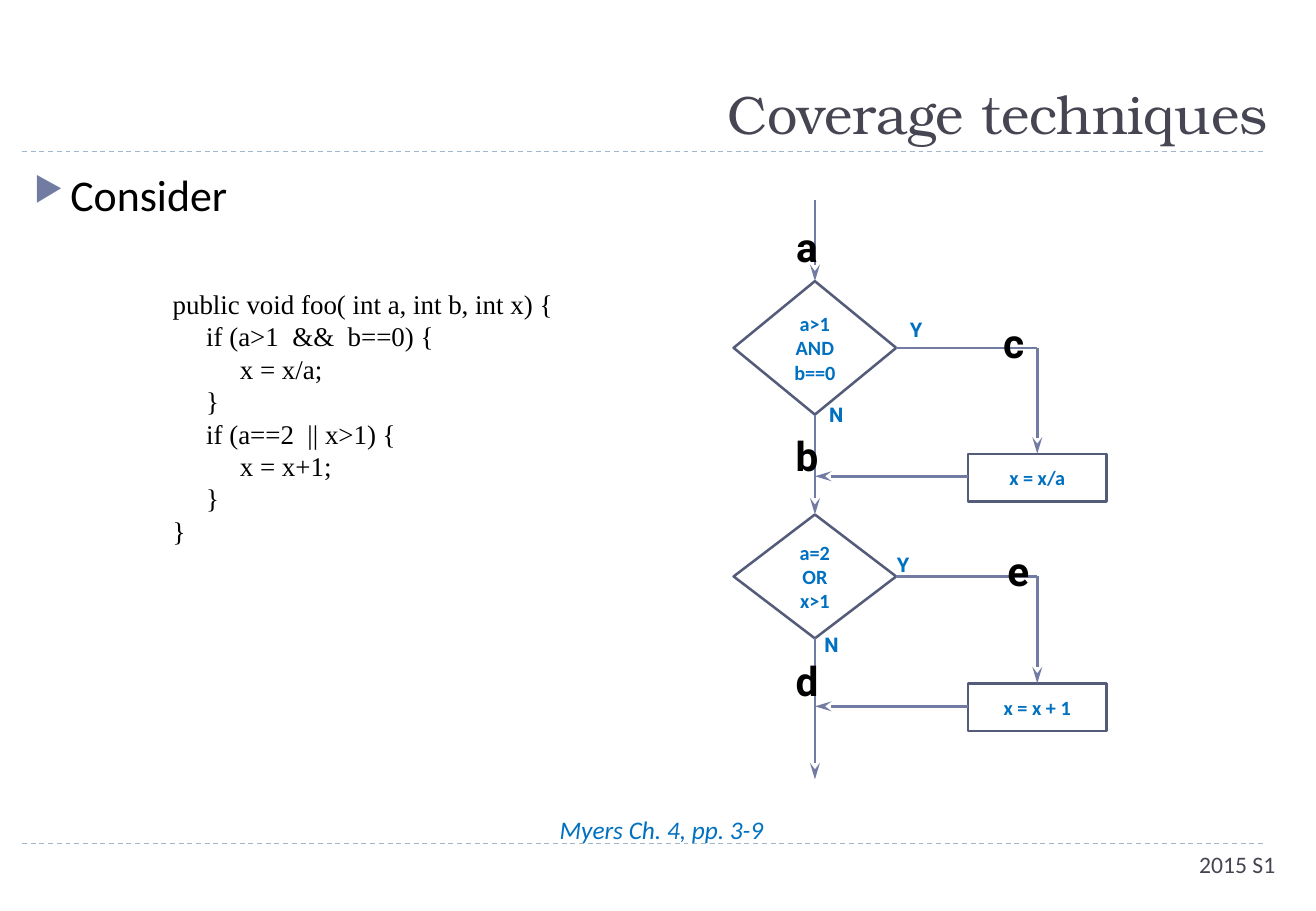
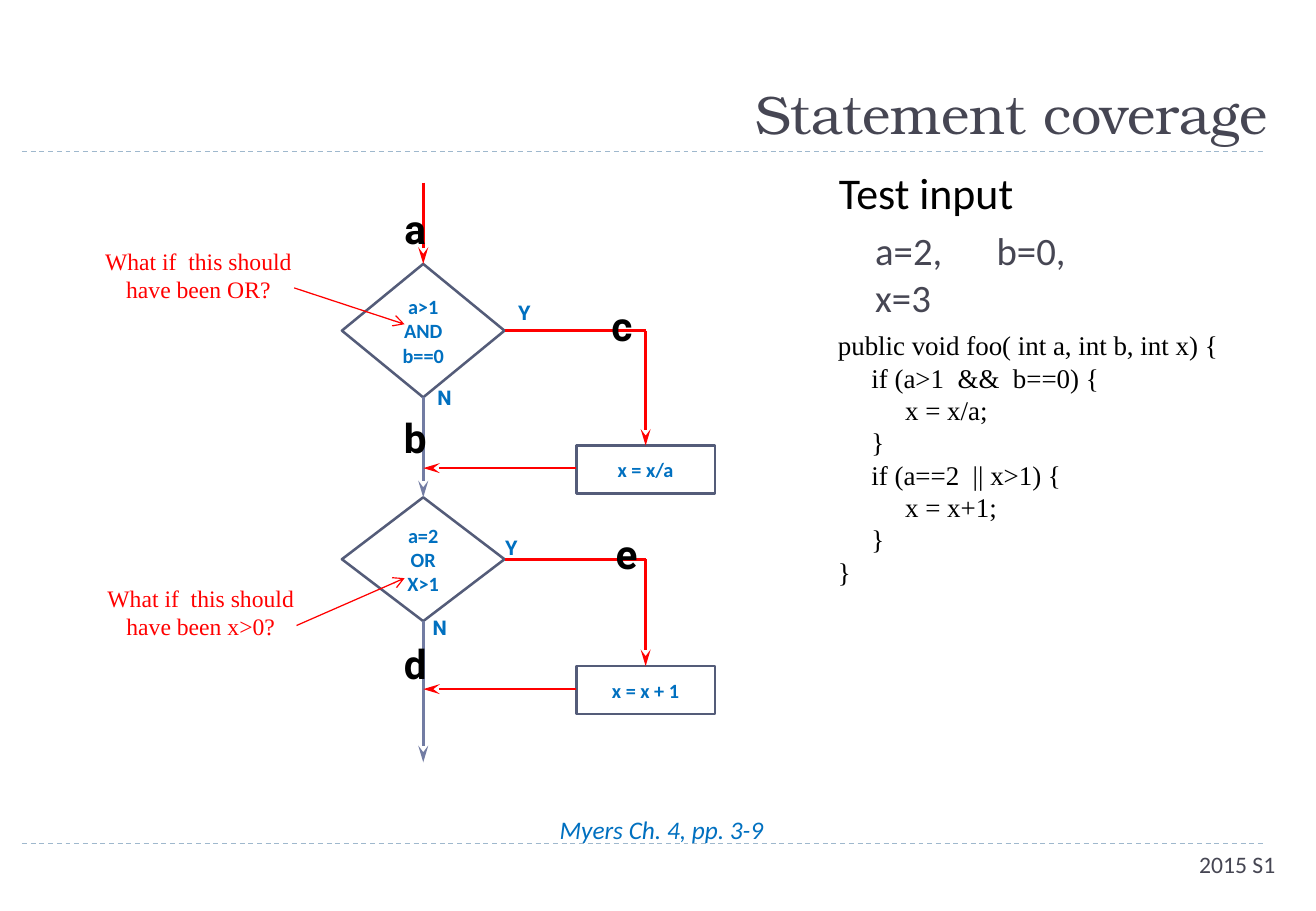
"""Build two slides on coverage techniques with a shared flowchart and code sample."""
import lxml.etree
import pptx
import pptx.dml.color
import pptx.enum.dml
import pptx.enum.shapes
import pptx.enum.text
import pptx.oxml.ns
import pptx.util

Cm = pptx.util.Cm
Pt = pptx.util.Pt
qn = pptx.oxml.ns.qn
SHAPE = pptx.enum.shapes.MSO_SHAPE
ANCHOR = pptx.enum.text.MSO_ANCHOR
ALIGN = pptx.enum.text.PP_ALIGN

COLORS = {
    "rule": "9FB8CD",
    "heading": "464653",
    "body": "000000",
    "accent": "0070C0",
    "outline": "545C79",
    "flow": "727CA3",
    "taken": "FF0000",
    "paper": "FFFFFF",
}
RGB = {role: pptx.dml.color.RGBColor.from_string(value) for role, value in COLORS.items()}


def write(holder, text, size=12, font="Calibri", color="body", align=ALIGN.LEFT, anchor=ANCHOR.TOP,
          bold=False, italic=False, before=0, left=0, hanging=0, bullet=None):
    frame = holder.text_frame
    frame.word_wrap = True
    frame.vertical_anchor = anchor
    for line in text.split("\n"):
        paragraph = frame.add_paragraph() if frame.text else frame.paragraphs[0]
        paragraph.alignment = align
        paragraph.space_before = Pt(before)
        properties = paragraph._p.get_or_add_pPr()
        properties.set("marL", str(Cm(left)))
        properties.set("indent", str(-Cm(hanging)))
        if bullet:
            tint = lxml.etree.SubElement(properties, qn("a:buClr"))
            lxml.etree.SubElement(tint, qn("a:srgbClr"), val=COLORS["flow"])
            lxml.etree.SubElement(properties, qn("a:buSzPct"), val="76000")
            lxml.etree.SubElement(properties, qn("a:buFont"), typeface="OpenSymbol")
            lxml.etree.SubElement(properties, qn("a:buChar"), char=bullet)
        run = paragraph.add_run()
        run.text = line
        run.font.name = font
        run.font.size = Pt(size)
        run.font.bold = bold
        run.font.italic = italic
        run.font.color.rgb = RGB[color]


def draw_line(slide, ends, color, width=1.5, head=None, length="lg", dash=None):
    line = slide.shapes.add_connector(pptx.enum.shapes.MSO_CONNECTOR.STRAIGHT, *map(Cm, ends))
    line.line.color.rgb = RGB[color]
    line.line.width = Pt(width)
    if dash:
        line.line.dash_style = dash
    outline = line.line._get_or_add_ln()
    if head:
        lxml.etree.SubElement(outline, qn("a:tailEnd"), type=head, w="med", len=length)
    lxml.etree.SubElement(line._element.spPr, qn("a:effectLst"))


CODE = """public void foo( int a, int b, int x) {
     if (a>1  &&  b==0) {
          x = x/a;
     }
     if (a==2  || x>1) {
          x = x+1;
     }
}"""

LABELS = [
    ("a", -0.71, 0.33), ("b", -0.71, 4.7), ("c", 3.61, 2.34), ("d", -0.71, 9.42), ("e", 3.71, 7.11),
    ("Y", 1.57, 2.34), ("Y", 1.3, 7.24), ("N", -0.1, 4.11), ("N", -0.2, 8.92),
]

TOPICS = [
    {"title": "Coverage techniques", "axis": 17.04, "top": 4.18, "division": 5.31,
     "second_test": "a=2\nOR\nx>1", "route": "flow", "code_at": (3.36, 5.89)},
    {"title": "Statement coverage", "axis": 8.85, "top": 3.82, "division": 5.5,
     "second_test": "a=2\nOR\nX>1", "route": "taken", "code_at": (17.27, 6.75)},
]

HALF_DIAMOND = 1.7
BOX_LEFT, BOX_WIDTH, BOX_HEIGHT = 3.2, 2.9, 1
BRANCH = BOX_LEFT + BOX_WIDTH / 2
FIRST_TOP, FIRST_HEIGHT = 1.7, 2.79
SECOND_TOP, SECOND_HEIGHT = 6.58, 2.59
FIRST_MIDDLE = FIRST_TOP + FIRST_HEIGHT / 2
SECOND_MIDDLE = SECOND_TOP + SECOND_HEIGHT / 2
INCREMENT, EXIT = 10.11, 12.12

SLIDE_HEIGHT = 19.05
deck = pptx.Presentation()
deck.slide_width = Cm(SLIDE_HEIGHT * 13 / 9)
deck.slide_height = Cm(SLIDE_HEIGHT)

for topic in TOPICS:
    slide = deck.slides.add_slide(deck.slide_layouts[6])
    for rule_y in (3.17, 17.64):
        draw_line(slide, (0.46, rule_y, 26.46, rule_y), "rule", width=0.75,
                  dash=pptx.enum.dml.MSO_LINE.DASH)
    title = slide.shapes.add_textbox(Cm(2.51), Cm(0.43), Cm(24.25), Cm(2.74))
    write(title, topic["title"], size=32, font="TeX Gyre Bonum", color="heading",
          align=ALIGN.RIGHT, anchor=ANCHOR.BOTTOM)
    term = slide.shapes.add_textbox(Cm(20.04), Cm(17.65), Cm(6.88), Cm(1.02))
    write(term, "2015 S1", size=14, color="heading", align=ALIGN.RIGHT)
    citation = slide.shapes.add_textbox(Cm(9.25), Cm(16.91), Cm(8.41), Cm(1.19))
    write(citation, "Myers Ch. 4, pp. 3-9", size=15, color="accent", align=ALIGN.CENTER,
          italic=True, left=0.76)
    code = slide.shapes.add_textbox(*map(Cm, topic["code_at"]), Cm(8.79), Cm(5.74))
    write(code, CODE, size=16, font="Times New Roman")

    axis, top, division, route = topic["axis"], topic["top"], topic["division"], topic["route"]
    diamond = (SHAPE.FLOWCHART_DECISION, -HALF_DIAMOND, 2 * HALF_DIAMOND)
    process = (SHAPE.FLOWCHART_PROCESS, BOX_LEFT, BOX_WIDTH)
    for (outline, x, width), y, height, text in [
        (diamond, FIRST_TOP, FIRST_HEIGHT, "a>1\nAND\nb==0"),
        (diamond, SECOND_TOP, SECOND_HEIGHT, topic["second_test"]),
        (process, division, BOX_HEIGHT, "x = x/a"),
        (process, INCREMENT, BOX_HEIGHT, "x = x + 1"),
    ]:
        step = slide.shapes.add_shape(outline, Cm(axis + x), Cm(top + y), Cm(width), Cm(height))
        step.shadow.inherit = False
        step.fill.solid()
        step.fill.fore_color.rgb = RGB["paper"]
        step.line.color.rgb = RGB["outline"]
        step.line.width = Pt(1.5)
        write(step, text, color="accent", align=ALIGN.CENTER, anchor=ANCHOR.MIDDLE, bold=True)

    division_exit, increment_exit = division + 0.47, INCREMENT + 0.48
    for x1, y1, x2, y2, color, head in [
        (0, 0, 0, FIRST_TOP, route, "stealth"),
        (0, FIRST_TOP + FIRST_HEIGHT, 0, SECOND_TOP, "flow", "stealth"),
        (0, SECOND_TOP + SECOND_HEIGHT, 0, EXIT, "flow", "stealth"),
        (HALF_DIAMOND, FIRST_MIDDLE, BRANCH, FIRST_MIDDLE, route, None),
        (BRANCH, FIRST_MIDDLE, BRANCH, division, route, "stealth"),
        (BOX_LEFT, division_exit, 0, division_exit, route, "stealth"),
        (HALF_DIAMOND, SECOND_MIDDLE, BRANCH, SECOND_MIDDLE, route, None),
        (BRANCH, SECOND_MIDDLE, BRANCH, INCREMENT, route, "stealth"),
        (BOX_LEFT, increment_exit, 0, increment_exit, route, "stealth"),
    ]:
        draw_line(slide, (axis + x1, top + y1, axis + x2, top + y2), color, head=head)

    for text, x, y in LABELS:
        answer = text in "YN"
        label = slide.shapes.add_textbox(Cm(axis + x), Cm(top + y), Cm(1.09), Cm(0.76 if answer else 1.02))
        write(label, text, size=12 if answer else 24, font="Roboto",
              color="accent" if answer else "body", align=ALIGN.CENTER, bold=True)

techniques, statement = deck.slides

prompt = techniques.shapes.add_textbox(Cm(0.46), Cm(3.38), Cm(26.37), Cm(1.55))
write(prompt, "Consider", size=26, left=0.76, hanging=0.76, bullet="▶")

test_input = statement.shapes.add_textbox(Cm(17.29), Cm(3.35), Cm(6.45), Cm(2.64))
write(test_input, "Test input", size=26)
write(test_input, "a=2,\tb=0, x=3", size=23, color="heading", before=5, left=0.76)

for question, x, y, pointer in [
    ("What if  this should have been OR?", 1.75, 5.03, (6.15, 6.02, 8.46, 6.78)),
    ("What if  this should have been x>0?", 1.8, 12.08, (6.2, 13.08, 8.46, 12.09)),
]:
    doubt = statement.shapes.add_textbox(Cm(x), Cm(y), Cm(4.8), Cm(1.45))
    write(doubt, question, size=14, font="Times New Roman", color="taken", align=ALIGN.CENTER)
    draw_line(statement, pointer, "taken", width=0.75, head="arrow", length="med")

deck.save("out.pptx")
